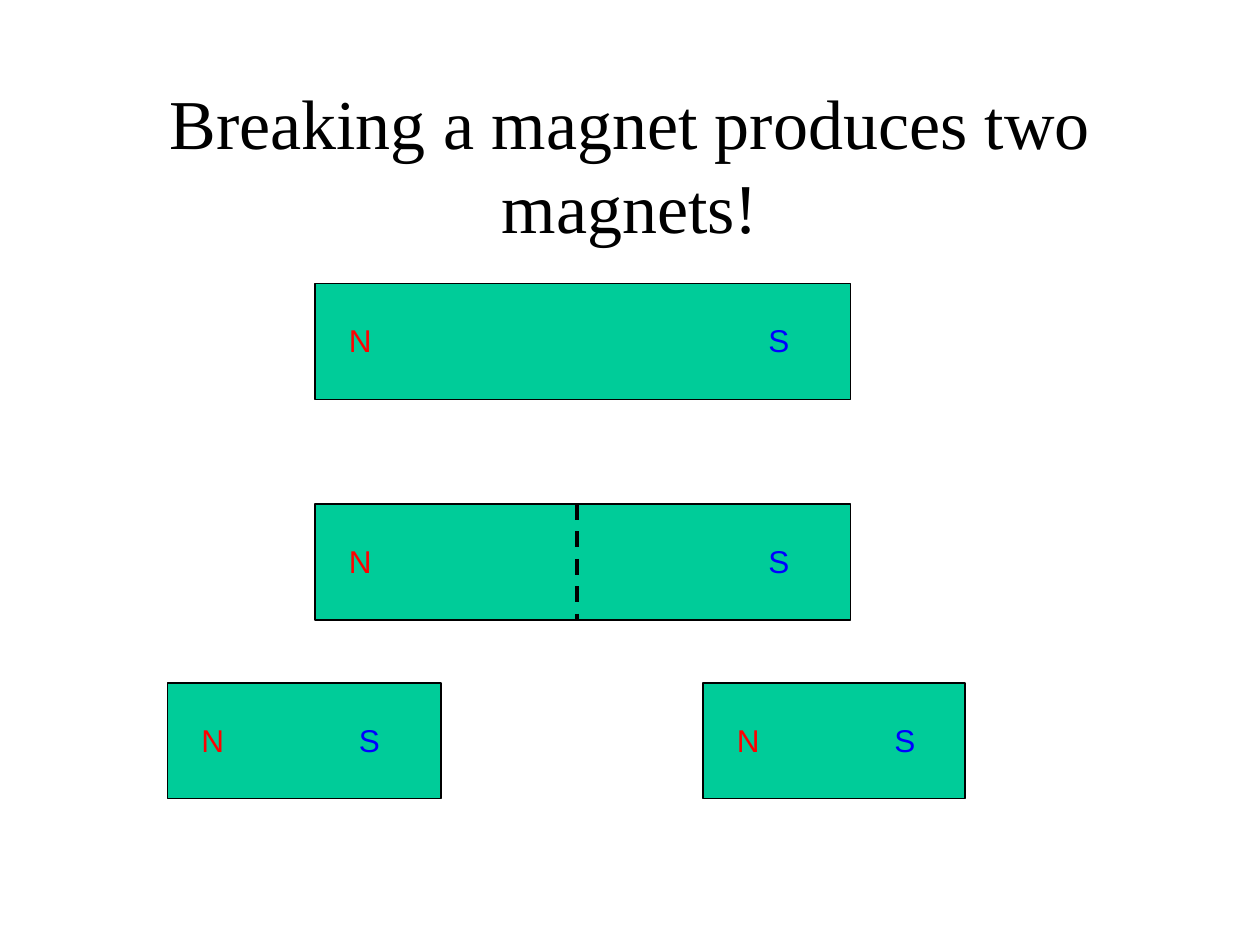
"""Build a slide showing that breaking a magnet produces two magnets."""
from dataclasses import dataclass

import pptx
import pptx.dml.color
import pptx.enum.dml
import pptx.enum.shapes
import pptx.enum.text
import pptx.oxml.ns
import pptx.util
from lxml import etree
from pptx.util import Inches

HEIGHT = 0.92
LABEL_INSET = 0.17


@dataclass
class Magnet:
    left: float
    top: float
    width: float
    south_left: float


MAGNETS = [
    Magnet(2.5, 2.25, 4.25, 6),
    Magnet(2.5, 4, 4.25, 6),
    Magnet(1.33, 5.42, 2.17, 2.75),
    Magnet(5.58, 5.42, 2.08, 7),
]


def color(value: str) -> pptx.dml.color.RGBColor:
    return pptx.dml.color.RGBColor.from_string(value)


def add_text(slide, text: str, left: float, top: float, width: float, height: float,
             size: float, font_name: str, font_color: str):
    shape = slide.shapes.add_textbox(Inches(left), Inches(top), Inches(width), Inches(height))
    shape.text_frame.word_wrap = True
    paragraph = shape.text_frame.paragraphs[0]
    paragraph.text = text
    paragraph.font.size = pptx.util.Pt(size)
    paragraph.font.name = font_name
    paragraph.font.color.rgb = color(font_color)
    return shape


def add_title(slide, text: str) -> None:
    shape = add_text(slide, text, 0.75, 0.67, 8.5, 1.25, 40, "Times New Roman", "000000")
    shape.text_frame.vertical_anchor = pptx.enum.text.MSO_ANCHOR.MIDDLE
    shape.text_frame.paragraphs[0].alignment = pptx.enum.text.PP_ALIGN.CENTER


def add_magnet(slide, magnet: Magnet) -> None:
    shape = slide.shapes.add_shape(
        pptx.enum.shapes.MSO_SHAPE.RECTANGLE, Inches(magnet.left), Inches(magnet.top),
        Inches(magnet.width), Inches(HEIGHT))
    shape.shadow.inherit = False
    shape.fill.solid()
    shape.fill.fore_color.rgb = color("00CC99")
    shape.line.color.rgb = color("000000")
    shape.line.width = pptx.util.Pt(0.75)
    poles = [("N", magnet.left + LABEL_INSET, "FF0000"), ("S", magnet.south_left, "0000FF")]
    for pole, left, pole_color in poles:
        label = add_text(slide, pole, left, magnet.top + 0.25, 0.42, 0.4, 18, "Arial", pole_color)
        label.text_frame.auto_size = pptx.enum.text.MSO_AUTO_SIZE.SHAPE_TO_FIT_TEXT


def add_break_line(slide, left: float, top: float) -> None:
    connector = slide.shapes.add_connector(
        pptx.enum.shapes.MSO_CONNECTOR.STRAIGHT, Inches(left), Inches(top),
        Inches(left), Inches(top + HEIGHT))
    connector.line.color.rgb = color("000000")
    connector.line.width = pptx.util.Pt(2.25)
    connector.line.dash_style = pptx.enum.dml.MSO_LINE.DASH
    etree.SubElement(connector._element.spPr, pptx.oxml.ns.qn("a:effectLst"))


def main() -> None:
    presentation = pptx.Presentation()
    presentation.slide_width = Inches(10)
    presentation.slide_height = Inches(7.5)
    slide = presentation.slides.add_slide(presentation.slide_layouts[6])
    add_title(slide, "Breaking a magnet produces two magnets!")
    for magnet in MAGNETS:
        add_magnet(slide, magnet)
    add_break_line(slide, 4.58, MAGNETS[1].top)
    presentation.save("out.pptx")


if __name__ == "__main__":
    main()
